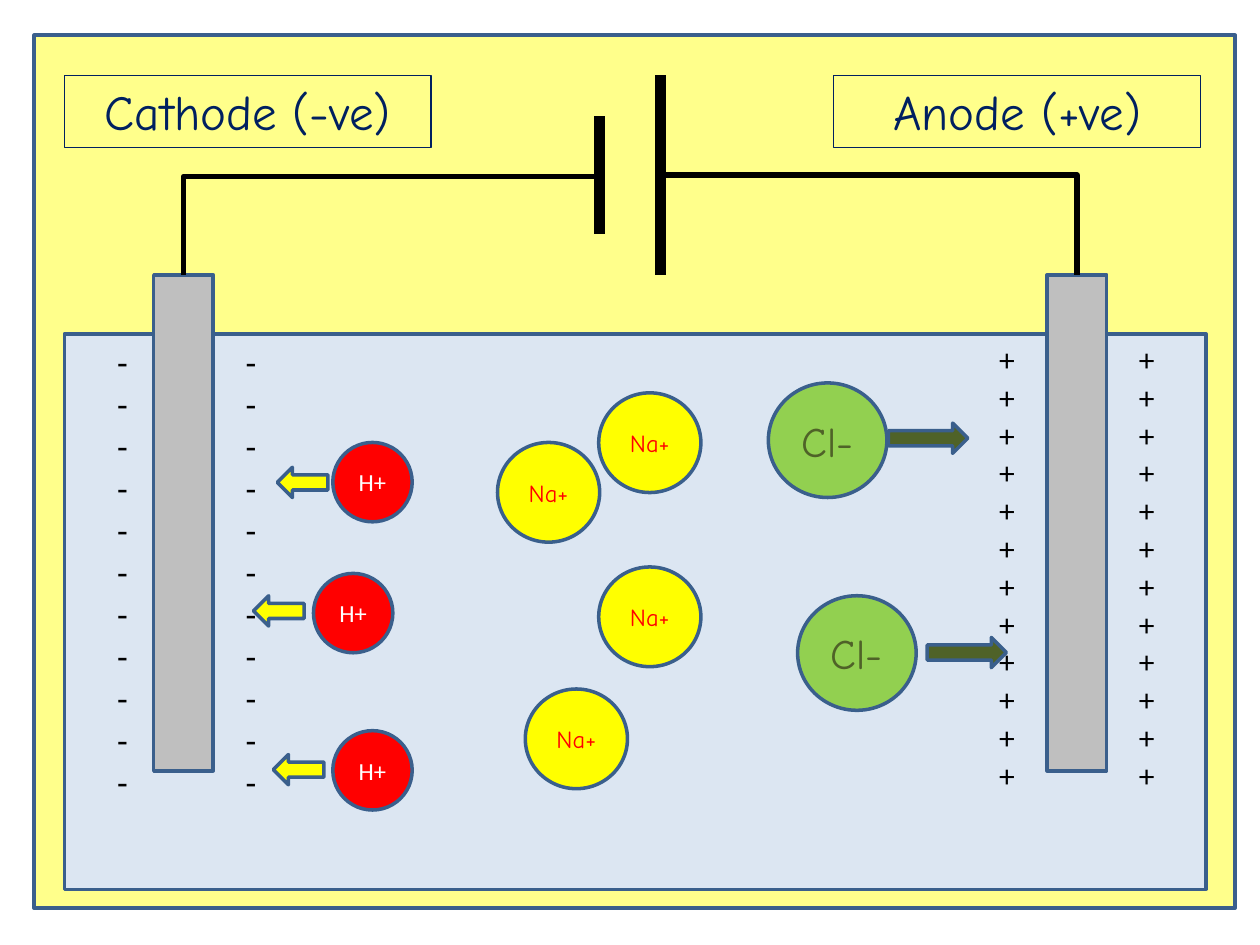
"""Build a slide showing ions moving to the electrodes in brine electrolysis."""
from lxml import etree
from pptx import Presentation
from pptx.dml.color import RGBColor
from pptx.enum import shapes, text
from pptx.oxml import ns
from pptx.util import Cm, Pt

COLORS = {"frame": "FFFF8B", "edge": "3A5F8C", "bath": "DCE6F2", "metal": "BFBFBF",
          "navy": "002060", "black": "000000", "white": "FFFFFF", "red": "FF0000",
          "yellow": "FFFF00", "green": "92D050", "olive": "4F6228"}
COLORS = {name: RGBColor.from_string(value) for name, value in COLORS.items()}
KIND = shapes.MSO_SHAPE
HAND = "Comic Neue"

prs = Presentation()
prs.slide_width, prs.slide_height = Cm(25.4), Cm(19.05)
s = prs.slides.add_slide(prs.slide_layouts[6])


def add_shape(kind, x, y, w, h, fill=None, edge="edge", weight=2):
    sp = s.shapes.add_shape(kind, Cm(x), Cm(y), Cm(w), Cm(h))
    sp.shadow.inherit = False
    if fill:
        sp.fill.solid()
        sp.fill.fore_color.rgb = COLORS[fill]
    else:
        sp.fill.background()
    sp.line.color.rgb = COLORS[edge]
    sp.line.width = Pt(weight)
    return sp


def write(sp, words, size, font, color, align=text.PP_ALIGN.CENTER):
    tf = sp.text_frame
    tf.text = words
    for p in tf.paragraphs:
        p.alignment = align
        for r in p.runs:
            r.font.size, r.font.name = Pt(size), font
            r.font.color.rgb = COLORS[color]
    return tf


add_shape(KIND.RECTANGLE, 0.69, 0.71, 24.21, 17.6, "frame")
add_shape(KIND.RECTANGLE, 1.3, 6.73, 23.01, 11.2, "bath")
for x in (3.1, 21.11):
    add_shape(KIND.RECTANGLE, x, 5.54, 1.2, 10, "metal")

STRAIGHT, ELBOW = shapes.MSO_CONNECTOR.STRAIGHT, shapes.MSO_CONNECTOR.ELBOW
for kind, x1, y1, x2, y2, weight in (
        (STRAIGHT, 13.31, 1.52, 13.31, 5.54, 6),
        (STRAIGHT, 12.09, 2.34, 12.09, 4.72, 6),
        (ELBOW, 12.09, 3.56, 3.7, 5.54, 3),
        (ELBOW, 13.31, 3.53, 21.71, 5.54, 3)):
    wire = s.shapes.add_connector(kind, Cm(x1), Cm(y1), Cm(x2), Cm(y2))
    wire.line.color.rgb = COLORS["black"]
    wire.line.width = Pt(weight)
    props = wire._element.spPr
    etree.SubElement(props, ns.qn("a:effectLst"))
    if kind == ELBOW:
        props.find(ns.qn("a:prstGeom")).set("prst", "bentConnector2")

for x, words in ((1.3, "Cathode (-ve)"), (16.81, "Anode (+ve)")):
    label = add_shape(KIND.RECTANGLE, x, 1.52, 7.39, 1.45, edge="navy", weight=0.75)
    tf = write(label, words, 28, HAND, "navy")
    tf.vertical_anchor = text.MSO_ANCHOR.TOP

for sign, count, size, w, h, lefts in (("-", 11, 20, 0.61, 9.65, (4.7, 2.11)),
                                       ("+", 12, 18, 0.79, 9.5, (19.89, 22.71))):
    for x in lefts:
        charges = s.shapes.add_textbox(Cm(x), Cm(6.73), Cm(w), Cm(h))
        tf = write(charges, "\n".join([sign] * count), size, "Calibri", "black",
                   text.PP_ALIGN.LEFT)
        tf.word_wrap = True

for words, w, h, fill, size, font, color, places in (
        ("H+", 1.6, 1.6, "red", 14, "Calibri", "white",
         ((6.71, 8.92), (6.71, 14.73), (6.32, 11.56))),
        ("Cl-", 2.39, 2.31, "green", 24, HAND, "olive",
         ((15.49, 7.72), (16.08, 12.01))),
        ("Na+", 2.06, 2.01, "yellow", 14, HAND, "red",
         ((10.03, 8.92), (12.07, 7.92), (12.07, 11.43), (10.59, 13.89)))):
    for x, y in places:
        ion = add_shape(KIND.OVAL, x, y, w, h, fill)
        tf = write(ion, words, size, font, color)
        tf.vertical_anchor = text.MSO_ANCHOR.MIDDLE
        tf.word_wrap = False

for w, fill, turn, places in (
        (1.02, "yellow", 180, ((5.59, 9.42), (5.11, 12.01), (5.51, 15.21))),
        (1.6, "olive", 0, ((17.91, 8.53), (18.69, 12.85)))):
    for x, y in places:
        arrow = add_shape(KIND.RIGHT_ARROW, x, y, w, 0.61, fill)
        arrow.rotation = turn

prs.save("out.pptx")
